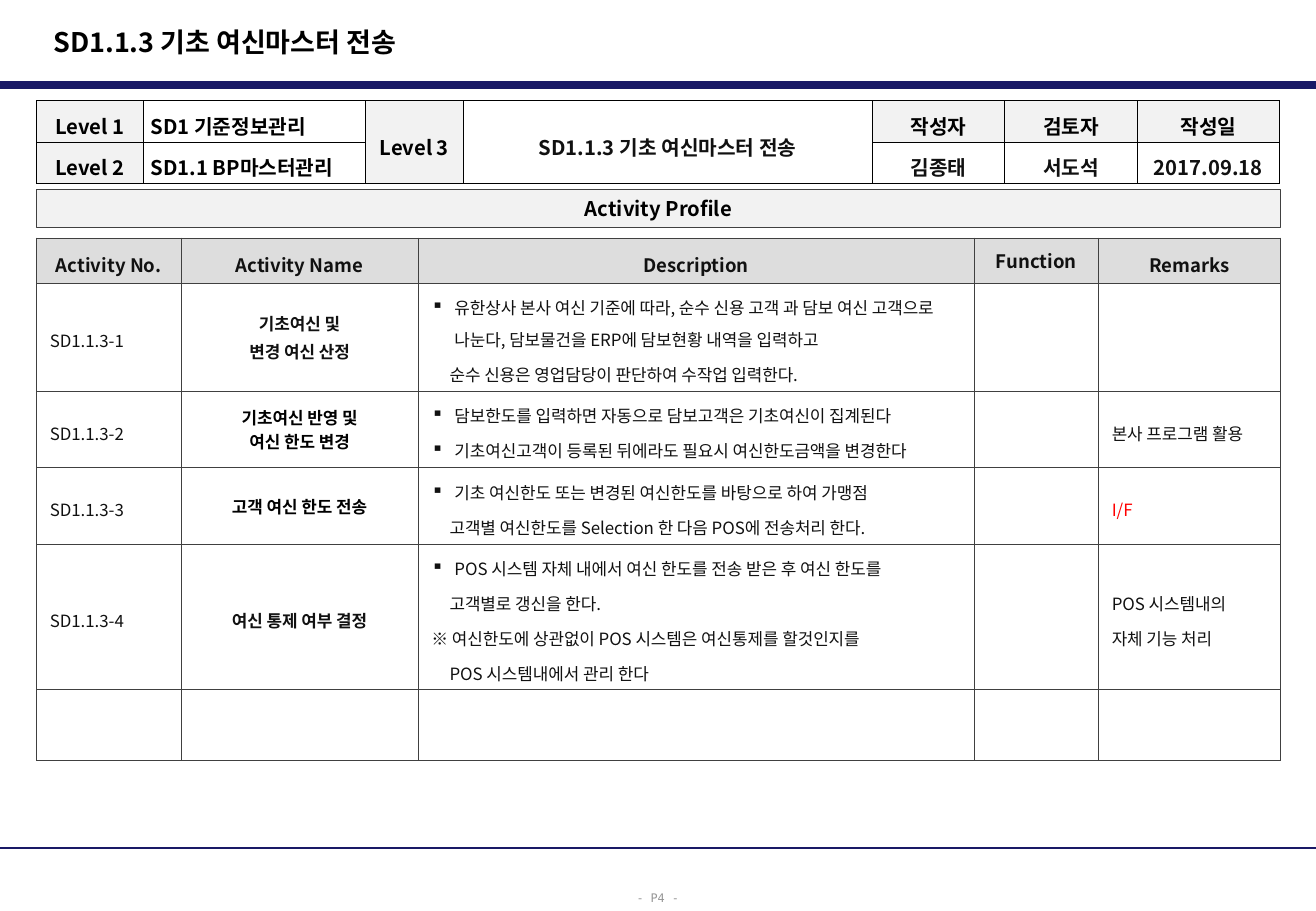
"""Build the activity profile slide for SD1.1.3."""
from lxml import etree
from pptx import Presentation
from pptx.dml.color import RGBColor
from pptx.enum.shapes import MSO_CONNECTOR, MSO_SHAPE
from pptx.enum.text import MSO_ANCHOR, MSO_AUTO_SIZE, PP_ALIGN
from pptx.oxml.ns import qn
from pptx.util import Inches, Pt

LEFT, CENTER = PP_ALIGN.LEFT, PP_ALIGN.CENTER
MIDDLE = MSO_ANCHOR.MIDDLE
STRAIGHT, RECTANGLE = MSO_CONNECTOR.STRAIGHT, MSO_SHAPE.RECTANGLE
NO_AUTOFIT = MSO_AUTO_SIZE.NONE
BLACK = RGBColor(0x00, 0x00, 0x00)
INK = RGBColor(0x11, 0x11, 0x11)
RED = RGBColor(0xFF, 0x00, 0x00)
NAVY = RGBColor(0x19, 0x19, 0x66)
FOOTER_GRAY = RGBColor(0x96, 0x96, 0x96)
BORDER_GRAY = RGBColor(0x40, 0x40, 0x40)
LABEL_FILL = RGBColor(0xF2, 0xF2, 0xF2)
HEADER_FILL = RGBColor(0xDD, 0xDD, 0xDD)
FONT, MONO = "Noto Sans CJK KR", "DejaVu Sans Mono"


def write(tf, text, size, color, bold=False, align=LEFT, spacing=1.0, before=0, font=FONT):
    tf.text = text
    for i, p in enumerate(tf.paragraphs):
        p.alignment = align
        p.line_spacing = spacing
        p.space_before = Pt(before if i else 0)
        for r in p.runs:
            r.font.size, r.font.bold, r.font.name = Pt(size), bold, font
            r.font.color.rgb = color
            etree.SubElement(r.font._element, qn("a:ea")).set("typeface", font)


def add_grid(top, widths, heights, border, margin_x, margin_y):
    frame = s.shapes.add_table(len(heights), len(widths), Inches(0.3), Inches(top),
                               Inches(sum(widths)), Inches(sum(heights)))
    table = frame.table
    table.first_row = table.horz_banding = False
    for column, width in zip(table.columns, widths):
        column.width = Inches(width)
    for row, height in zip(table.rows, heights):
        row.height = Inches(height)
    for cell in table.iter_cells():
        cell.vertical_anchor = MIDDLE
        cell.margin_left = cell.margin_right = Inches(margin_x)
        cell.margin_top = cell.margin_bottom = Inches(margin_y)
        for side in ("a:lnL", "a:lnR", "a:lnT", "a:lnB"):
            ln = etree.SubElement(cell._tc.get_or_add_tcPr(), qn(side), w=str(Pt(0.5)))
            solid = etree.SubElement(ln, qn("a:solidFill"))
            etree.SubElement(solid, qn("a:srgbClr"), val=str(border))
        cell.fill.background()
    return table


prs = Presentation()
prs.slide_width, prs.slide_height = Inches(10.83), Inches(7.5)
s = prs.slides.add_slide(prs.slide_layouts[5])

for y, weight in ((0.7, 4.5), (6.98, 1.5)):
    line = s.shapes.add_connector(STRAIGHT, 0, Inches(y), prs.slide_width, Inches(y))
    line.line.color.rgb, line.line.width = NAVY, Pt(weight)
    etree.SubElement(line._element.spPr, qn("a:effectLst"))

footer = s.shapes.add_textbox(Inches(5.14), Inches(7.25), Inches(0.56), Inches(0.25))
footer.text_frame.word_wrap = False
write(footer.text_frame, "- P4 -", 7, FOOTER_GRAY, spacing=1.3, font=MONO)

title = s.shapes.title
title.left, title.top = Inches(0.34), Inches(0.16)
title.width, title.height = Inches(7.11), Inches(0.37)
title.text_frame.vertical_anchor = MIDDLE
title.text_frame.auto_size = NO_AUTOFIT
write(title.text_frame, "SD1.1.3 기초 여신마스터 전송", 16, BLACK, True)

ACTIVITIES = [
    ("Activity No.", "Activity Name", "Description", "Function", "Remarks"),
    ("SD1.1.3-1", "기초여신 및\n변경 여신 산정",
     "▪유한상사 본사 여신 기준에 따라, 순수 신용 고객 과 담보 여신 고객으로 "
     "나눈다, 담보물건을 ERP에 담보현황 내역을 입력하고\n"
     "순수 신용은 영업담당이 판단하여 수작업 입력한다.", "", ""),
    ("SD1.1.3-2", "기초여신 반영 및\n여신 한도 변경",
     "▪담보한도를 입력하면 자동으로 담보고객은 기초여신이 집계된다\n"
     "▪기초여신고객이 등록된 뒤에라도 필요시 여신한도금액을 변경한다",
     "", "본사 프로그램 활용"),
    ("SD1.1.3-3", "고객 여신 한도 전송",
     "▪기초 여신한도 또는 변경된 여신한도를 바탕으로 하여 가맹점\n"
     "고객별 여신한도를 Selection 한 다음 POS에 전송처리 한다.", "", "I/F"),
    ("SD1.1.3-4", "여신 통제 여부 결정",
     "▪POS 시스템 자체 내에서 여신 한도를 전송 받은 후 여신 한도를\n"
     "고객별로 갱신을 한다.\n"
     "※ 여신한도에 상관없이 POS 시스템은 여신통제를 할것인지를\n"
     "POS 시스템내에서 관리 한다", "", "POS 시스템내의\n자체 기능 처리"),
]
table = add_grid(1.96, (1.19, 1.95, 4.58, 1.02, 1.5), (0.37, 0.89, 0.63, 0.63, 1.2, 0.58),
                 BORDER_GRAY, 0.11, 0.04)
for i, activity in enumerate(ACTIVITIES):
    for j, text in enumerate(activity):
        cell = table.cell(i, j)
        tf = cell.text_frame
        if i == 0:
            cell.fill.solid()
            cell.fill.fore_color.rgb = HEADER_FILL
            write(tf, text, 11, INK, True, CENTER, 1.0 if text == "Function" else 1.3)
        elif j == 1:
            write(tf, text, 10, BLACK if i in (2, 3) else INK, True, CENTER,
                  1.3 if i == 4 else 1.0, 2 if i == 1 else 0)
        else:
            write(tf, text.replace("▪", ""), 10, RED if text == "I/F" else INK,
                  spacing=1.3, before=2)
        if i and j == 2:
            for p, source in zip(tf.paragraphs, text.split("\n")):
                pPr = p._p.get_or_add_pPr()
                if source.startswith("▪"):
                    pPr.set("marL", str(Inches(0.19)))
                    pPr.set("indent", str(Inches(-0.19)))
                    etree.SubElement(pPr, qn("a:buChar"), char="▪")
                elif not source.startswith("※"):
                    pPr.set("marL", str(Inches(0.15)))

banner = s.shapes.add_shape(RECTANGLE, Inches(0.3), Inches(1.56), Inches(10.24), Inches(0.31))
banner.shadow.inherit = False
banner.fill.solid()
banner.fill.fore_color.rgb = LABEL_FILL
banner.line.color.rgb, banner.line.width = BORDER_GRAY, Pt(0.5)
banner.text_frame.word_wrap = False
banner.text_frame.vertical_anchor = MIDDLE
write(banner.text_frame, "Activity Profile", 12, BLACK, True, CENTER)

LEVELS = [
    ("Level 1", "SD1 기준정보관리", "Level 3", "SD1.1.3 기초 여신마스터 전송",
     "작성자", "검토자", "작성일"),
    ("Level 2", "SD1.1 BP마스터관리", "", "", "김종태", "서도석", "2017.09.18"),
]
table = add_grid(0.83, (0.88, 1.83, 0.8, 3.37, 1.09, 1.09, 1.17), (0.34, 0.34),
                 BLACK, 0.06, 0.01)
for j in (2, 3):
    table.cell(0, j).merge(table.cell(1, j))
for i, level in enumerate(LEVELS):
    for j, text in enumerate(level):
        cell = table.cell(i, j)
        if cell.is_spanned:
            continue
        is_label = j in (0, 2) or (i == 0 and j > 3)
        if is_label:
            cell.fill.solid()
            cell.fill.fore_color.rgb = LABEL_FILL
        write(cell.text_frame, text, 12, BLACK if is_label or j == 1 else INK, True,
              LEFT if j == 1 else CENTER, 1.3)

prs.save("out.pptx")
